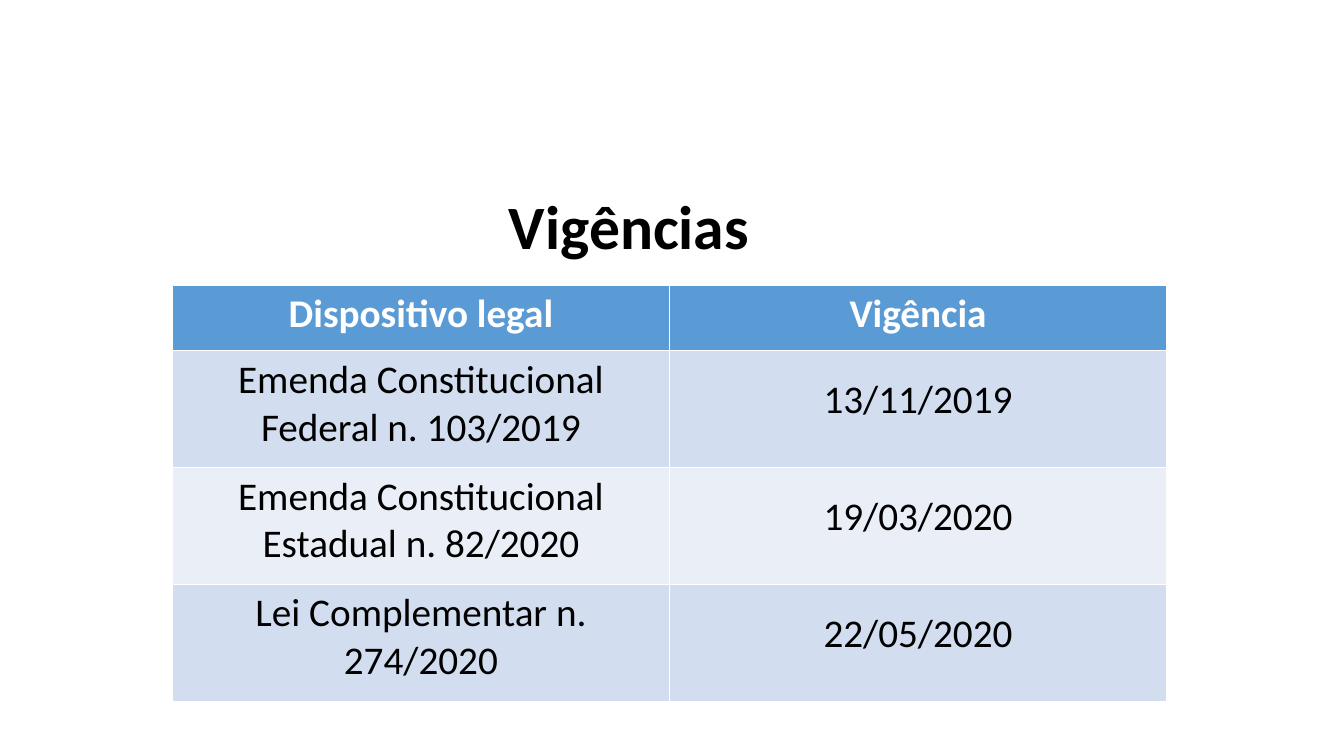
from pptx import Presentation
from pptx.dml.color import RGBColor
from pptx.enum import text
from pptx.util import Inches, Pt

TITLE = "Vigências"
ROWS = [
    ("Dispositivo legal", "Vigência"),
    ("Emenda Constitucional Federal n. 103/2019", "13/11/2019"),
    ("Emenda Constitucional Estadual n. 82/2020", "19/03/2020"),
    ("Lei Complementar n. 274/2020", "22/05/2020"),
]
HEADER_FILL = "5B9BD5"
BAND_FILLS = ("EAEFF7", "D2DEEF")
HEADER_H, BODY_H, COL_W = 0.65, 1.16, 4.93
DATE_TOP = 0.25


def rgb(value):
    return RGBColor.from_string(value)


def write(tf, content, size, color, bold):
    tf.word_wrap = True
    p = tf.paragraphs[0]
    p.text = content
    p.alignment = text.PP_ALIGN.CENTER
    p.font.name = "Calibri"
    p.font.size = Pt(size)
    p.font.bold = bold
    p.font.color.rgb = rgb(color)
    return p


prs = Presentation()
prs.slide_width, prs.slide_height = Inches(13.33), Inches(7.5)
s = prs.slides.add_slide(prs.slide_layouts[6])

title = s.shapes.add_textbox(Inches(0.49), Inches(1.72), Inches(11.5), Inches(1.11))
title.text_frame.vertical_anchor = text.MSO_ANCHOR.MIDDLE
write(title.text_frame, TITLE, 44, "000000", True).line_spacing = 0.9

heights = [HEADER_H] + [BODY_H] * (len(ROWS) - 1)
table = s.shapes.add_table(
    len(ROWS), 2, Inches(1.71), Inches(2.83), Inches(2 * COL_W), Inches(sum(heights))
).table
for col in table.columns:
    col.width = Inches(COL_W)
for i, (values, height) in enumerate(zip(ROWS, heights)):
    table.rows[i].height = Inches(height)
    header = i == 0
    for j, value in enumerate(values):
        cell = table.cell(i, j)
        cell.fill.solid()
        cell.fill.fore_color.rgb = rgb(HEADER_FILL if header else BAND_FILLS[i % 2])
        if j == 1 and not header:
            cell.margin_top = Inches(DATE_TOP)
        write(cell.text_frame, value, 28, "FFFFFF" if header else "000000", header)

prs.save("out.pptx")
